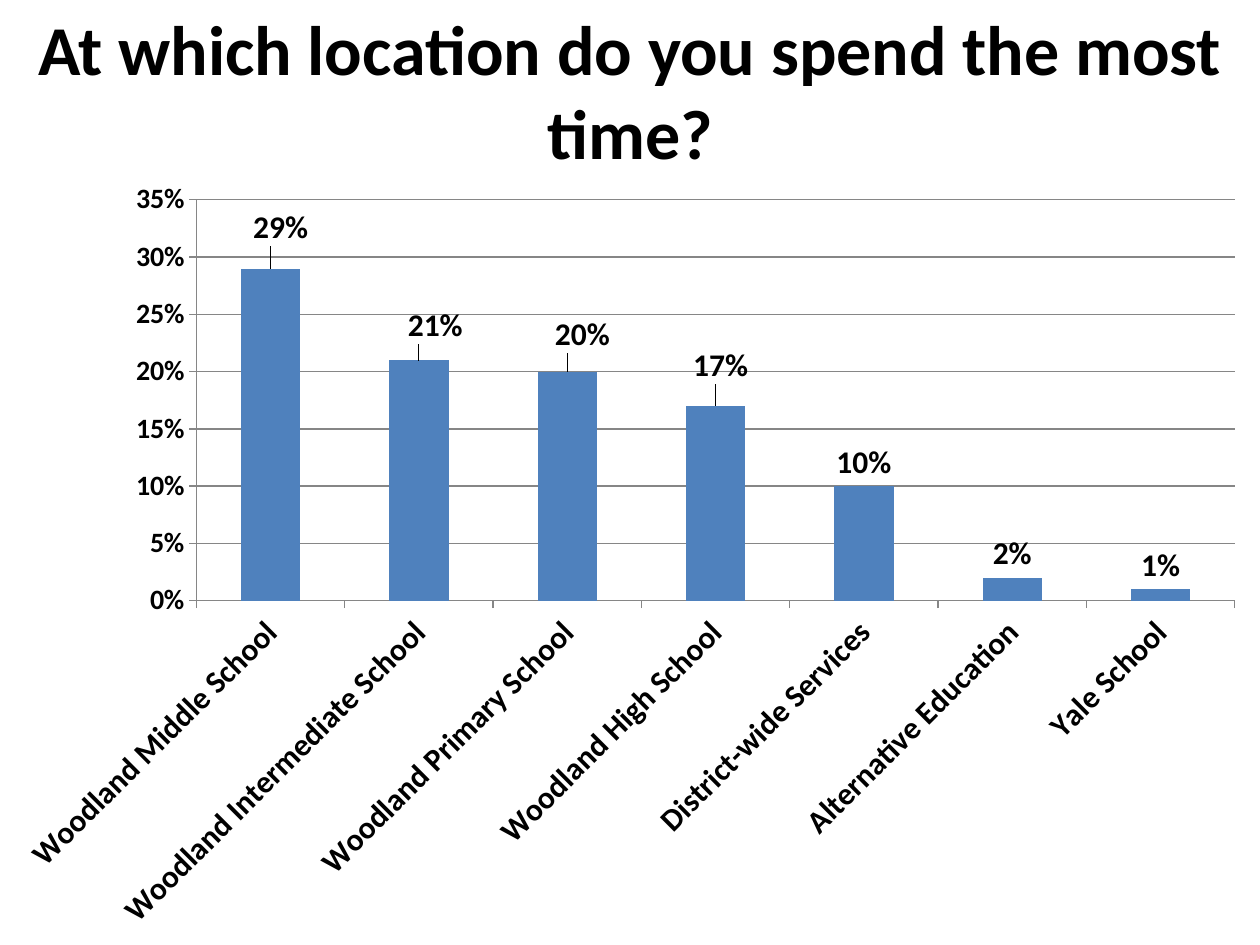
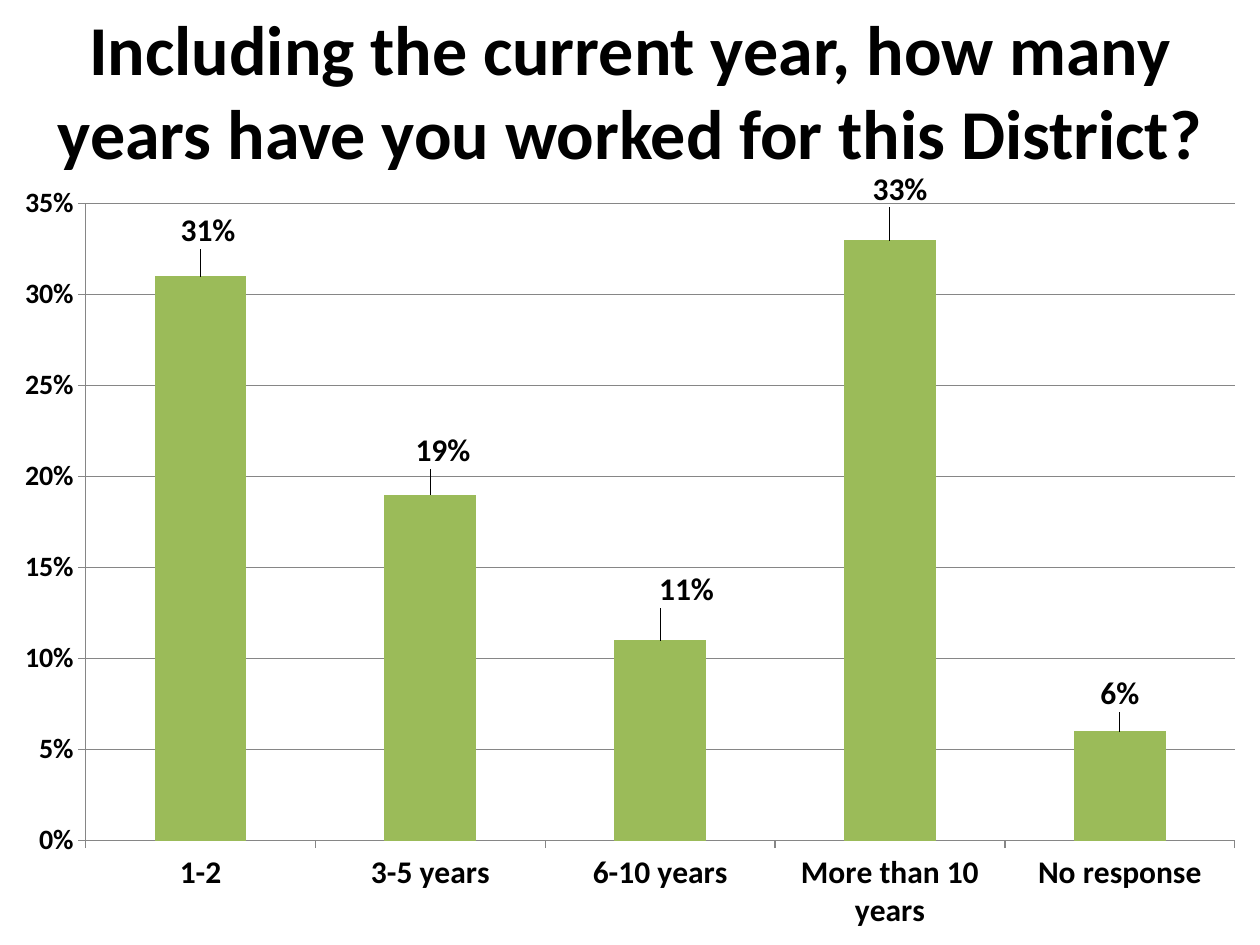
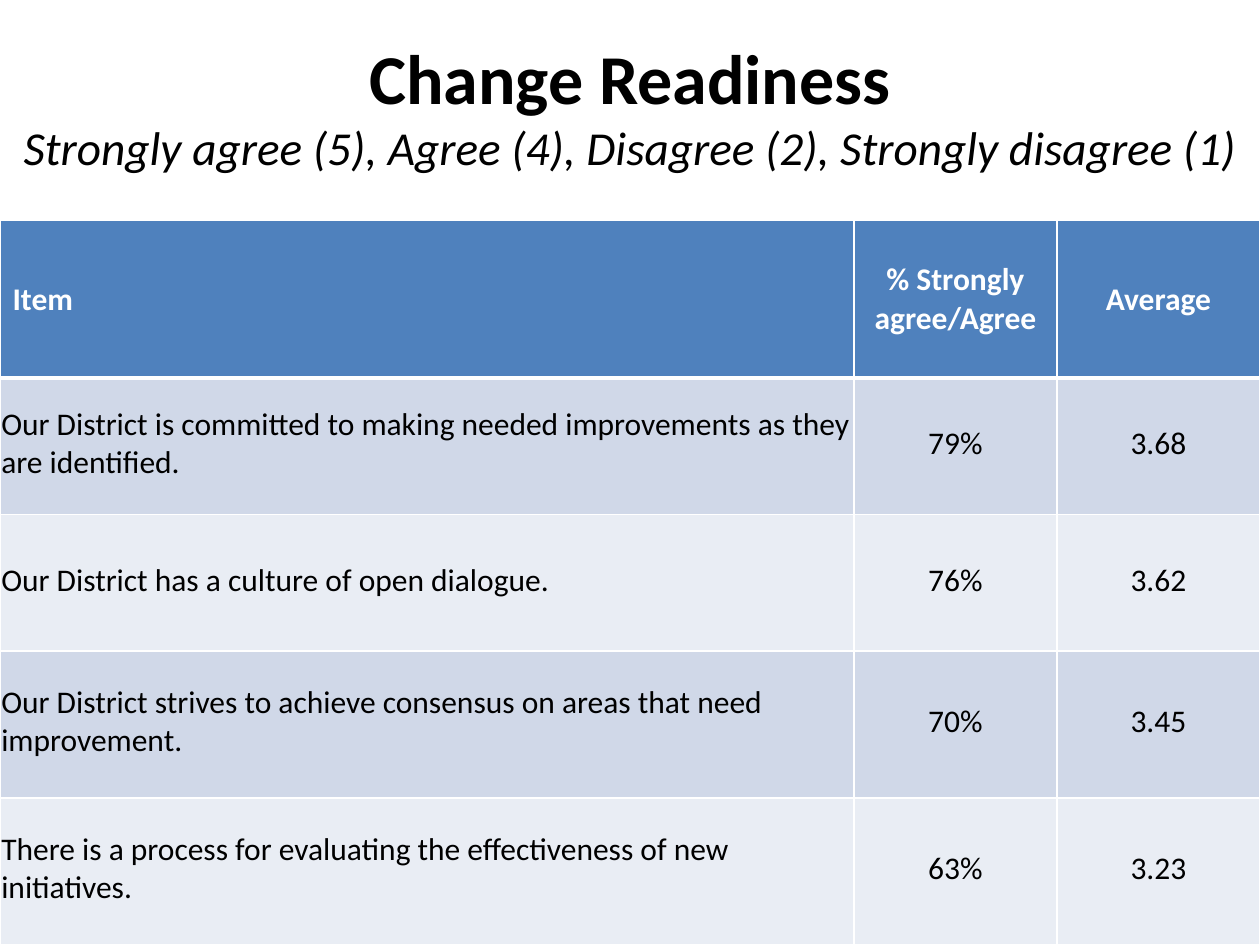
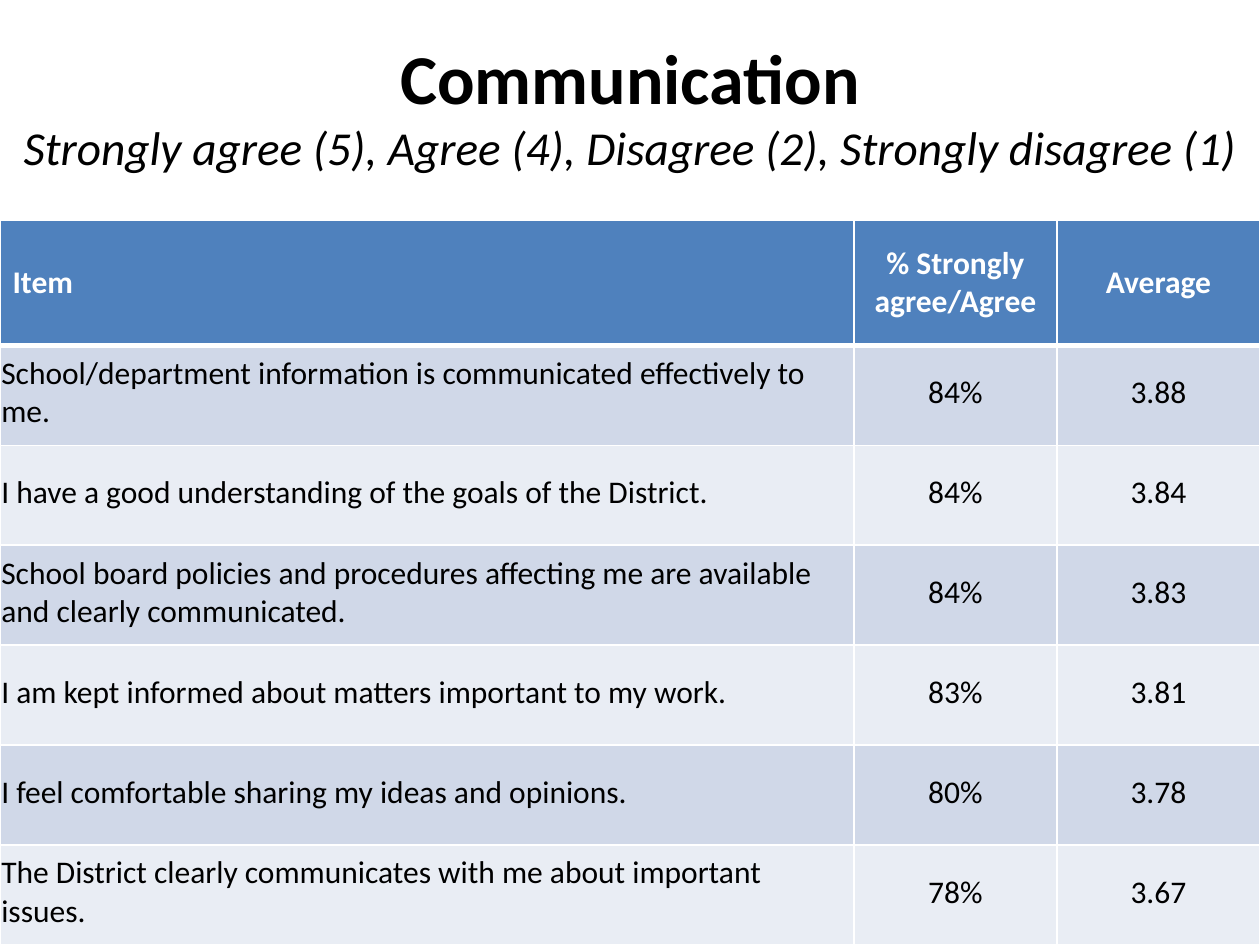
import copy
import lxml.etree as etree
import pptx
import pptx.util
import pptx.chart.data
import pptx.dml.color
import pptx.enum.chart
import pptx.enum.text
import pptx.oxml.ns

Pt = pptx.util.Pt
qn = pptx.oxml.ns.qn

CHARTS = [
    {
        "title": "At which location do you spend the most time?",
        "color": "blue",
        "bars": [
            ("Woodland Middle School", 0.29, (0.8, -2.2)),
            ("Woodland Intermediate School", 0.21, (1.3, -1.4)),
            ("Woodland Primary School", 0.2, (1.2, -1.7)),
            ("Woodland High School", 0.17, (0.4, -2.2)),
            ("District-wide Services", 0.1, None),
            ("Alternative Education", 0.02, None),
            ("Yale School", 0.01, None),
        ],
        "plot": (15.6, 4.1, 82.4, 51.6),
        "turn": -45,
    },
    {
        "title": "Including the current year, how many years have you worked for this District?",
        "color": "green",
        "bars": [
            ("1-2", 0.31, (0.6, -2.8)),
            ("3-5 years", 0.19, (1, -2.7)),
            ("6-10 years", 0.11, (2.1, -3.5)),
            ("More than 10 years", 0.33, (0.8, -3.5)),
            ("No response", 0.06, (0, -1.8)),
        ],
        "plot": (6.8, 4.6, 91.2, 82),
        "turn": 0,
    },
]

SCALE = "Strongly agree (5), Agree (4), Disagree (2), Strongly disagree (1)"
HEAD = ("Item", "% Strongly agree/Agree", "Average")
TABLES = [
    {
        "title": "Change Readiness",
        "rows": [
            ("Our District is committed to making needed improvements as they are identified.", "79%", "3.68"),
            ("Our District has a culture of open dialogue.", "76%", "3.62"),
            ("Our District strives to achieve consensus on areas that need improvement.", "70%", "3.45"),
            ("There is a process for evaluating the effectiveness of new initiatives.", "63%", "3.23"),
        ],
        "highs": [90, 78, 78, 84, 84],
    },
    {
        "title": "Communication",
        "rows": [
            ("School/department information is communicated effectively to me.", "84%", "3.88"),
            ("I have a good understanding of the goals of the District.", "84%", "3.84"),
            ("School board policies and procedures affecting me are available and clearly communicated.", "84%", "3.83"),
            ("I am kept informed about matters important to my work.", "83%", "3.81"),
            ("I feel comfortable sharing my ideas and opinions.", "80%", "3.78"),
            ("The District clearly communicates with me about important issues.", "78%", "3.67"),
        ],
        "highs": [71.4] + [57.1] * 6,
    },
]

THEME = {
    "font": "Calibri",
    "black": "000000", "white": "FFFFFF", "gray": "868686",
    "blue": "4F81BD", "green": "9BBB59",
    "bands": ("D0D8E8", "E9EDF4"),
    "title": 40, "scale": 27, "text": 18, "axis": 16,
}
WIDE, HIGH = 720, 540
CHART_TOP, TABLE_TOP = 96, 126
COLS = (488, 116, 116)


def rgb(name):
    return pptx.dml.color.RGBColor.from_string(THEME.get(name, name))


def style(font, size, color="black", bold=False, slant=False):
    font.name = THEME["font"]
    font.size = Pt(THEME[size])
    font.bold = bold
    font.italic = slant
    font.color.rgb = rgb(color)


def add_run(para, text, *look, **more):
    run = para.add_run()
    run.text = text
    style(run.font, *look, **more)
    return run


def add_slide(deck, text, high, note=None):
    slide = deck.slides.add_slide(deck.slide_layouts[5])
    title = slide.shapes.title
    title.left, title.top, title.width, title.height = 0, 0, Pt(WIDE), Pt(high)
    frame = title.text_frame
    frame.auto_size = pptx.enum.text.MSO_AUTO_SIZE.NONE
    frame.word_wrap = True
    frame.vertical_anchor = pptx.enum.text.MSO_ANCHOR.MIDDLE
    para = frame.paragraphs[0]
    para.alignment = pptx.enum.text.PP_ALIGN.CENTER
    run = add_run(para, text, "title", bold=True)
    if note:
        para.add_line_break()
        para._p.find(qn("a:br")).append(copy.deepcopy(run._r.find(qn("a:rPr"))))
        add_run(para, note, "scale", slant=True)
    return slide


def make_place(pairs):
    place = etree.Element(qn("c:layout"))
    inner = etree.SubElement(place, qn("c:manualLayout"))
    for tag, val in pairs:
        etree.SubElement(inner, qn("c:" + tag), val=str(val))
    return place


def set_plot(chart, plot):
    pairs = [("layoutTarget", "inner"), ("xMode", "edge"), ("yMode", "edge")]
    pairs += [(tag, round(part / 100, 3)) for tag, part in zip("xywh", plot)]
    area = chart.element.find(".//" + qn("c:plotArea"))
    old = area.find(qn("c:layout"))
    if old is not None:
        area.remove(old)
    area.insert(0, make_place(pairs))


def set_labels(chart, bars):
    plot = chart.plots[0]
    plot.has_data_labels = True
    outer = pptx.enum.chart.XL_LABEL_POSITION.OUTSIDE_END
    series = plot.series[0]
    for label in (plot.data_labels, series.data_labels):
        label.show_value = True
        label.number_format = "0%"
        label.number_format_is_linked = False
        label.position = outer
        style(label.font, "text", bold=True)
    for i, (_, _, shift) in enumerate(bars):
        if shift:
            label = series.points[i].data_label
            style(label.font, "text", bold=True)
            label.position = outer
    moved = [shift for _, _, shift in bars if shift]
    for mark, shift in zip(chart.element.iter(qn("c:dLbl")), moved):
        pairs = [(tag, round(part / 100, 3)) for tag, part in zip("xy", shift)]
        mark.insert(1, make_place(pairs))
        form = etree.Element(qn("c:numFmt"), formatCode="0%", sourceLinked="0")
        mark.insert(2, form)


def add_chart(deck, item):
    slide = add_slide(deck, item["title"], 102)
    data = pptx.chart.data.CategoryChartData(number_format="0%")
    data.categories = [bar[0] for bar in item["bars"]]
    data.add_series("Series 1", [bar[1] for bar in item["bars"]])
    kind = pptx.enum.chart.XL_CHART_TYPE.COLUMN_CLUSTERED
    chart = slide.shapes.add_chart(
        kind, 0, Pt(CHART_TOP), Pt(WIDE), Pt(HIGH - CHART_TOP), data).chart
    chart.has_title = False
    chart.has_legend = False
    style(chart.font, "text")
    plot = chart.plots[0]
    plot.gap_width = 150
    plot.vary_by_categories = False
    fill = plot.series[0].format.fill
    fill.solid()
    fill.fore_color.rgb = rgb(item["color"])
    cat, val = chart.category_axis, chart.value_axis
    val.minimum_scale, val.maximum_scale, val.major_unit = 0, 0.35, 0.05
    val.has_major_gridlines = True
    val.tick_labels.number_format = "0%"
    val.tick_labels.number_format_is_linked = False
    for axis, size in ((cat, "text"), (val, "axis")):
        axis.major_tick_mark = pptx.enum.chart.XL_TICK_MARK.OUTSIDE
        style(axis.tick_labels.font, size, bold=True)
    for line in (cat.format.line, val.format.line, val.major_gridlines.format.line):
        line.color.rgb = rgb("gray")
        line.width = Pt(0.75)
    if item["turn"]:
        body = cat._element.find(qn("c:txPr")).find(qn("a:bodyPr"))
        body.set("rot", str(item["turn"] * 60000))
        body.set("vert", "horz")
    set_plot(chart, item["plot"])
    set_labels(chart, item["bars"])


def set_edge(cell, top, base):
    props = cell._tc.get_or_add_tcPr()
    for i, (side, wide) in enumerate(zip("LRTB", (1, 1, top, base))):
        line = etree.Element(qn("a:ln" + side), w=str(Pt(wide)))
        fill = etree.SubElement(line, qn("a:solidFill"))
        etree.SubElement(fill, qn("a:srgbClr"), val=THEME["white"])
        props.insert(i, line)


def set_cell(cell, text, row, col):
    head = row == 0
    cell.fill.solid()
    cell.fill.fore_color.rgb = rgb("blue" if head else THEME["bands"][(row - 1) % 2])
    cell.vertical_anchor = pptx.enum.text.MSO_ANCHOR.MIDDLE
    if not head:
        cell.margin_left = cell.margin_right = cell.margin_top = Pt(0.75)
        cell.margin_bottom = Pt(3.6)
    para = cell.text_frame.paragraphs[0]
    if col:
        para.alignment = pptx.enum.text.PP_ALIGN.CENTER
    add_run(para, text, "text", "white" if head else "black", bold=head)
    set_edge(cell, 3 if row == 1 else 1, 3 if head else 1)


def add_table(deck, item):
    slide = add_slide(deck, item["title"], 120, SCALE)
    rows = [HEAD] + item["rows"]
    table = slide.shapes.add_table(
        len(rows), len(COLS), 0, Pt(TABLE_TOP), Pt(WIDE), Pt(HIGH - TABLE_TOP)).table
    for col, wide in zip(table.columns, COLS):
        col.width = Pt(wide)
    for row, high in zip(table.rows, item["highs"]):
        row.height = Pt(high)
    for r, row in enumerate(rows):
        for c, text in enumerate(row):
            set_cell(table.cell(r, c), text, r, c)


def main():
    deck = pptx.Presentation()
    deck.slide_width, deck.slide_height = Pt(WIDE), Pt(HIGH)
    for item in CHARTS:
        add_chart(deck, item)
    for item in TABLES:
        add_table(deck, item)
    deck.save("out.pptx")


if __name__ == "__main__":
    main()
